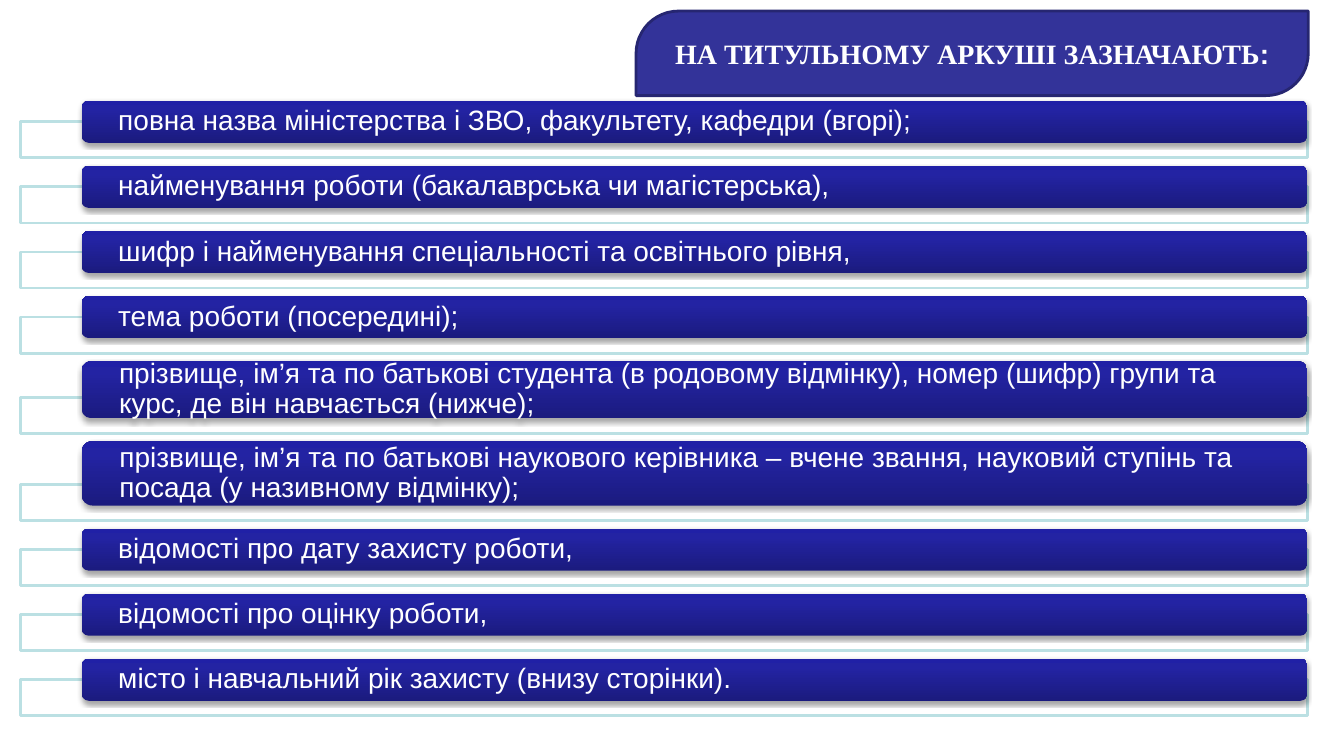
from copy import deepcopy

from lxml.etree import SubElement
from pptx import Presentation
from pptx.dml.color import RGBColor
from pptx.enum.shapes import MSO_SHAPE
from pptx.enum.text import MSO_ANCHOR, PP_ALIGN
from pptx.oxml.ns import qn
from pptx.util import Cm, Pt

WHITE = RGBColor(0xFF, 0xFF, 0xFF)
HEADER_FILL = RGBColor(0x33, 0x33, 0x99)
HEADER_LINE = RGBColor(0x26, 0x26, 0x71)
FRAME_LINE = RGBColor(0xBB, 0xE0, 0xE3)
BAR_STOPS = [
    (0, RGBColor(0x1B, 0x1B, 0x7E)),
    (0.8, RGBColor(0x23, 0x23, 0xA3)),
    (1, RGBColor(0x20, 0x20, 0xA6)),
]

# Item text and bar height in cm
ITEMS = [
    ("повна назва міністерства і ЗВО, факультету, кафедри (вгорі);", 1.06),
    ("найменування роботи (бакалаврська чи магістерська),", 1.06),
    ("шифр і найменування спеціальності та освітнього рівня,", 1.06),
    ("тема роботи (посередині);", 1.06),
    ("прізвище, ім’я та по батькові студента (в родовому відмінку), "
     "номер (шифр) групи та курс, де він навчається (нижче);", 1.44),
    ("прізвище, ім’я та по батькові наукового керівника – вчене звання, "
     "науковий ступінь та посада (у називному відмінку);", 1.62),
    ("відомості про дату захисту роботи,", 1.06),
    ("відомості про оцінку роботи,", 1.06),
    ("місто і навчальний рік захисту (внизу сторінки).", 1.06),
]
LIST_TOP = 2.54
GAP = 0.58
FRAME_OVERLAP = 0.53


class TitlePageSlide:
    body_font = "Arial"
    header_font = "Times New Roman"
    size = Pt(20)

    def __init__(self, prs):
        self.slide = prs.slides.add_slide(prs.slide_layouts[6])

    def shape(self, kind, left, top, width, height):
        s = self.slide.shapes.add_shape(
            kind, Cm(left), Cm(top), Cm(width), Cm(height))
        s.shadow.inherit = False
        return s

    def outline(self, s, fill, line):
        s.fill.solid()
        s.fill.fore_color.rgb = fill
        s.line.color.rgb = line
        s.line.width = Pt(2)

    def style_run(self, r, font, bold=False):
        r.font.name = font
        r.font.size = self.size
        r.font.bold = bold
        r.font.color.rgb = WHITE

    def header(self, text, mark):
        s = self.shape(MSO_SHAPE.ROUND_2_DIAG_RECTANGLE, 16.03, 0.28, 16.94, 2.13)
        s.adjustments[0] = 0.5
        self.outline(s, HEADER_FILL, HEADER_LINE)
        tf = s.text_frame
        tf.vertical_anchor = MSO_ANCHOR.MIDDLE
        p = tf.paragraphs[0]
        p.alignment = PP_ALIGN.CENTER
        for part, font in ((text, self.header_font), (mark, self.body_font)):
            r = p.add_run()
            r.text = part
            self.style_run(r, font, bold=True)

    def frame(self, top):
        s = self.shape(MSO_SHAPE.RECTANGLE, 0.51, top, 32.44, 0.91)
        self.outline(s, WHITE, FRAME_LINE)
        color = s.fill._xPr.find(qn("a:solidFill"))[0]
        SubElement(color, qn("a:alpha"), val="90000")

    def bar(self, text, top, height):
        s = self.shape(MSO_SHAPE.ROUNDED_RECTANGLE, 2.06, top, 30.89, height)
        s.line.fill.background()
        self.gradient(s)
        self.drop_shadow(s)
        tf = s.text_frame
        tf.text = text
        tf.word_wrap = True
        tf.vertical_anchor = MSO_ANCHOR.MIDDLE
        tf.margin_left = tf.margin_right = Cm(0.87)
        tf.margin_top = tf.margin_bottom = 0
        p = tf.paragraphs[0]
        p.alignment = PP_ALIGN.LEFT
        p.line_spacing = 0.9
        self.style_run(p.runs[0], self.body_font)

    def gradient(self, s):
        s.fill.gradient()
        s.fill.gradient_angle = 90
        stops = s._element.spPr.find(qn("a:gradFill")).find(qn("a:gsLst"))
        stops.append(deepcopy(stops[-1]))
        for stop, (position, color) in zip(s.fill.gradient_stops, BAR_STOPS):
            stop.position = position
            stop.color.rgb = color

    def drop_shadow(self, s):
        effects = s._element.spPr.find(qn("a:effectLst"))
        shadow = SubElement(
            effects, qn("a:outerShdw"), blurRad=str(Pt(3.1)),
            dist=str(Pt(1.8)), dir="5400000", rotWithShape="0")
        color = SubElement(shadow, qn("a:srgbClr"), val="000000")
        SubElement(color, qn("a:alpha"), val="35000")


def main():
    prs = Presentation()
    prs.slide_width = Cm(33.87)
    prs.slide_height = Cm(19.05)
    page = TitlePageSlide(prs)

    # Heading
    page.header("НА ТИТУЛЬНОМУ АРКУШІ ЗАЗНАЧАЮТЬ", ":")

    # List of items: each bar lies over its frame
    top = LIST_TOP
    for text, height in ITEMS:
        page.frame(top + height - FRAME_OVERLAP)
        page.bar(text, top, height)
        top += height + GAP

    prs.save("out.pptx")


if __name__ == "__main__":
    main()
